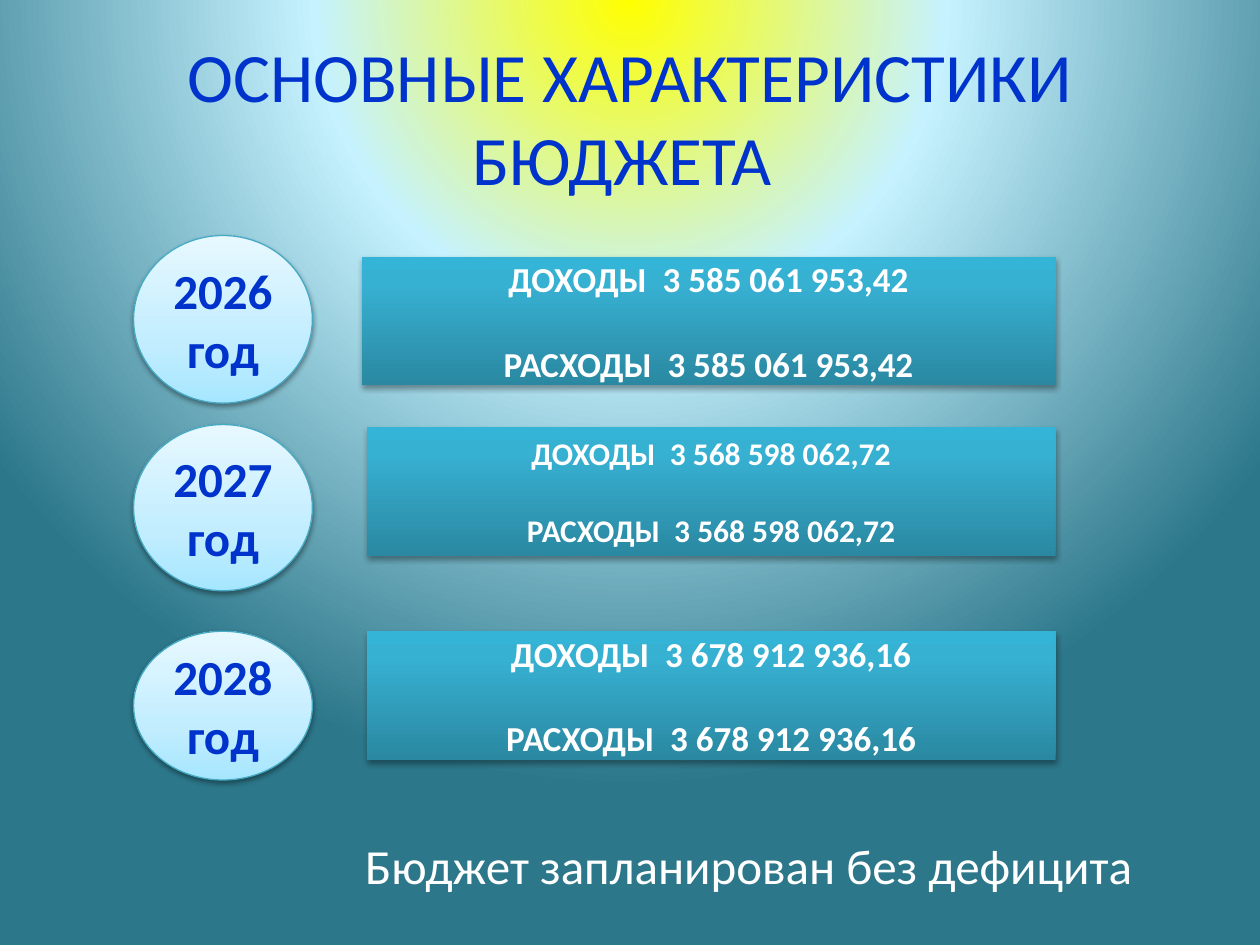
"""Build the slide with the main budget figures for three years."""
from lxml.etree import SubElement as Sub
from pptx import Presentation
from pptx.dml.color import RGBColor as RGB
from pptx.enum.shapes import MSO_SHAPE as Kind
from pptx.enum.text import MSO_ANCHOR as Anchor, PP_ALIGN as Align
from pptx.oxml.ns import qn
from pptx.util import Pt

COLORS = {"blue": "0033CC", "white": "FFFFFF", "edge": "46AAC5", "shade": "000000"}
SKY = [(0, "FFFF00"), (40, "C6F2FF"), (100, "2C778A")]
ICE = [(0, "A7E6FF"), (35, "C1EDFF"), (100, "E7F8FF")]
SEA = [(0, "2A88A2"), (80, "37B1D2"), (100, "34B4D6")]
YEARS = [
    ("2026 год", 134.6, 95.8, "3 585 061 953,42", 206.6, 396.7, 146.9, 20),
    ("2027 год", 242.6, 95, "3 568 598 062,72", 209.5, 393.8, 244.1, 18),
    ("2028\nгод", 360.7, 85, "3 678 912 936,16", 209.5, 393.8, 360.7, 20),
]


def blend(fill, parent, stops):
    """Put a gradient in place of the solid fill of parent and return it."""
    fill.solid()
    old = parent.find(qn("a:solidFill"))
    grad = Sub(parent, qn("a:gradFill"), rotWithShape="1")
    parent.replace(old, grad)
    row = Sub(grad, qn("a:gsLst"))
    for pos, tint in stops:
        stop = Sub(row, qn("a:gs"), pos=str(pos * 1000))
        Sub(stop, qn("a:srgbClr"), val=tint)
    return grad


def paint_back(slide):
    """Paint the round glow behind the slide."""
    fill = slide.background.fill
    fill.solid()
    base = slide.background._cSld.find(qn("p:bg")).find(qn("p:bgPr"))
    grad = blend(fill, base, SKY)
    ring = Sub(grad, qn("a:path"), {"path": "circle"})
    Sub(ring, qn("a:fillToRect"), l="50000", t="-80000", r="50000", b="180000")


def write(frame, text, size, color, bold=False, align=Align.CENTER, gap=0):
    """Set the text of a frame and format its paragraphs and runs."""
    frame.text = text
    for spot, par in enumerate(frame.paragraphs):
        par.alignment = align
        par.space_before = Pt(gap if spot else 0)
        for run in par.runs:
            font = run.font
            font.name, font.size, font.bold = "Calibri", Pt(size), bold
            font.color.rgb = RGB.from_string(COLORS[color])


def add_label(slide, box, text, size, color, align, wrap):
    """Add a text box."""
    frame = slide.shapes.add_textbox(*map(Pt, box)).text_frame
    frame.word_wrap = wrap
    frame.vertical_anchor = Anchor.MIDDLE if wrap else Anchor.TOP
    write(frame, text, size, color, align=align)


def add_block(slide, kind, box, stops, alpha, dist):
    """Add a shape with a vertical gradient and a soft shadow below."""
    shape = slide.shapes.add_shape(kind, *map(Pt, box))
    props = shape._element.spPr
    grad = blend(shape.fill, props, stops)
    Sub(grad, qn("a:lin"), ang="16200000", scaled="0")
    shape.line.fill.background()
    shape.shadow.inherit = False
    drop = Sub(props.find(qn("a:effectLst")), qn("a:outerShdw"),
               blurRad=str(Pt(3.1)), dist=str(Pt(dist)), dir="5400000",
               rotWithShape="0")
    tint = Sub(drop, qn("a:srgbClr"), val=COLORS["shade"])
    Sub(tint, qn("a:alpha"), val=str(alpha * 1000))
    return shape


def add_year(slide, text, top, height):
    """Add the oval that names a year."""
    box = (76.3, top, 102.2, height)
    oval = add_block(slide, Kind.OVAL, box, ICE, 38, 1.6)
    oval.line.color.rgb = RGB.from_string(COLORS["edge"])
    oval.line.width = Pt(0.75)
    write(oval.text_frame, text, 28, "blue", bold=True)


def add_sums(slide, total, left, top, width, size):
    """Add the bar with equal income and spending."""
    box = (left, top, width, 73.4)
    bar = add_block(slide, Kind.RECTANGLE, box, SEA, 35, 1.8)
    text = f"ДОХОДЫ  {total}\nРАСХОДЫ  {total}"
    write(bar.text_frame, text, size, "white", bold=True, gap=1.22 * size)


def main():
    """Build and save the slide."""
    deck = Presentation()
    deck.slide_width, deck.slide_height = Pt(720), Pt(540)
    slide = deck.slides.add_slide(deck.slide_layouts[6])
    paint_back(slide)
    add_label(slide, (36, 21.6, 648, 90), "ОСНОВНЫЕ ХАРАКТЕРИСТИКИ БЮДЖЕТА ",
              39.6, "blue", Align.CENTER, True)
    add_label(slide, (201.6, 473.8, 463.7, 41), "Бюджет запланирован без дефицита",
              28, "white", Align.LEFT, False)
    for year, top, height, total, left, width, level, size in YEARS:
        add_year(slide, year, top, height)
        add_sums(slide, total, left, level, width, size)
    deck.save("out.pptx")


if __name__ == "__main__":
    main()
